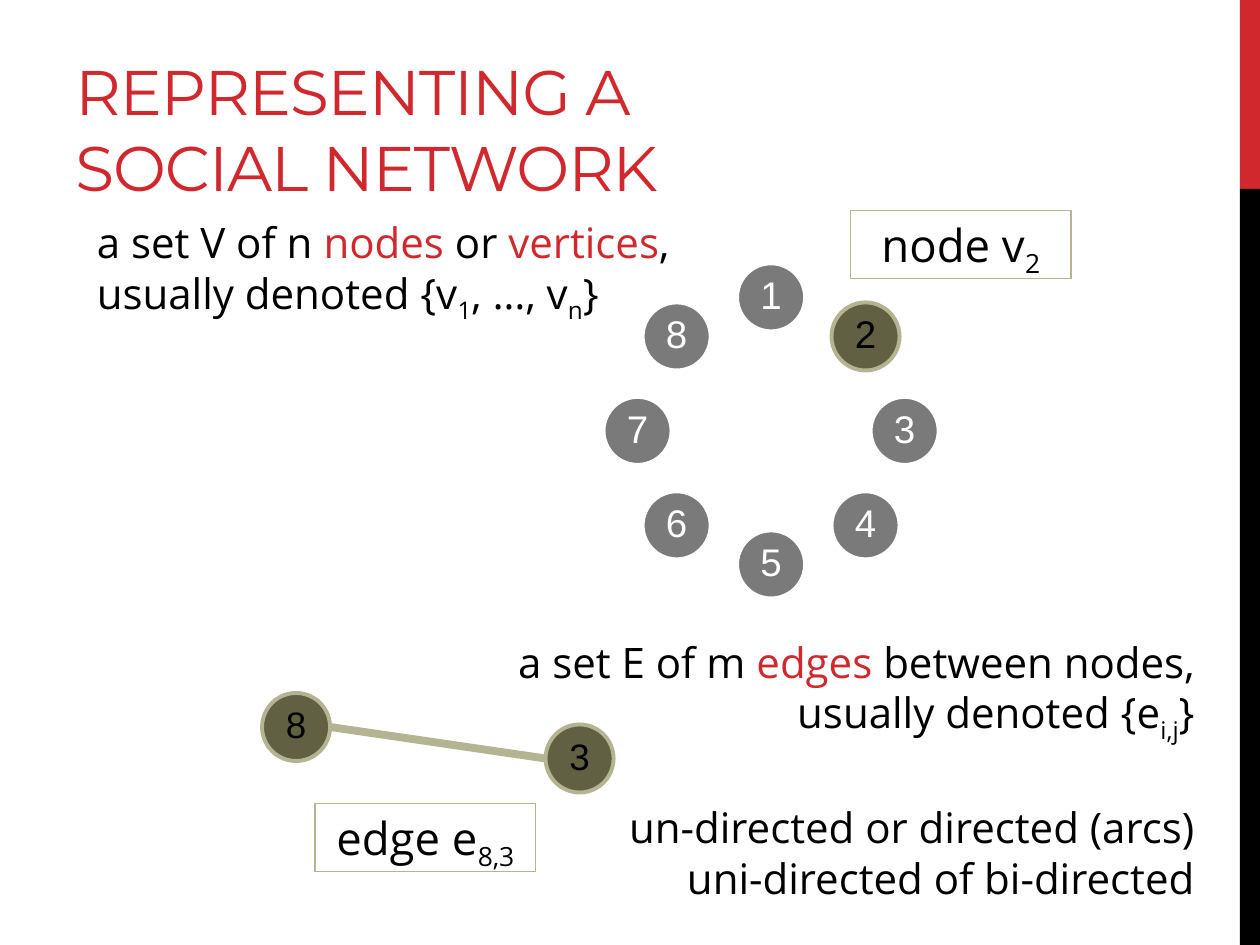
from math import cos, pi, sin

from lxml import etree
from pptx import Presentation
from pptx.dml.color import RGBColor
from pptx.enum.shapes import MSO_CONNECTOR, MSO_SHAPE
from pptx.enum.text import MSO_ANCHOR, PP_ALIGN
from pptx.oxml.ns import qn
from pptx.util import Inches, Pt

OVAL, RECT = MSO_SHAPE.OVAL, MSO_SHAPE.RECTANGLE
STRAIGHT = MSO_CONNECTOR.STRAIGHT
LEFT, CENTER, RIGHT = PP_ALIGN.LEFT, PP_ALIGN.CENTER, PP_ALIGN.RIGHT
TOP, MIDDLE, BOTTOM = MSO_ANCHOR.TOP, MSO_ANCHOR.MIDDLE, MSO_ANCHOR.BOTTOM

WIDTH, HEIGHT = 10, 7.5
RED, BLACK, WHITE = "D1282E", "000000", "FFFFFF"
GRAY, OLIVE, SAND = "7A7A7A", "616042", "B4B392"
TITLE_FONT, BODY_FONT, NODE_FONT = "Montserrat", "Open Sans", "Arial"
NODE_SIZE = 0.54


def color(hex_code):
    return RGBColor.from_string(hex_code)


def write(shape, lines, font, size, align=LEFT, anchor=TOP, ink=BLACK):
    """Each line is a list of (text, style); style is None, "sub" or a colour."""
    frame = shape.text_frame
    frame.word_wrap = True
    frame.vertical_anchor = anchor
    for number, line in enumerate(lines):
        paragraph = frame.add_paragraph() if number else frame.paragraphs[0]
        paragraph.alignment = align
        for text, style in line:
            run = paragraph.add_run()
            run.text = text
            run.font.name, run.font.size = font, Pt(size)
            run.font.color.rgb = color(ink if style in (None, "sub") else style)
            if style == "sub":
                run.font._element.set("baseline", "-25000")
    return frame


def add_text(slide, box, lines, font, size, **layout):
    textbox = slide.shapes.add_textbox(*map(Inches, box))
    return write(textbox, lines, font, size, **layout)


def add_figure(slide, kind, box, fill=None, line=None, line_width=0.75):
    figure = slide.shapes.add_shape(kind, *map(Inches, box))
    figure.shadow.inherit = False
    if fill:
        figure.fill.solid()
        figure.fill.fore_color.rgb = color(fill)
    else:
        figure.fill.background()
    if line:
        figure.line.color.rgb = color(line)
        figure.line.width = Pt(line_width)
    else:
        figure.line.fill.background()
    return figure


def add_node(slide, number, center, size, highlighted=False):
    fill, line, ink = (OLIVE, SAND, BLACK) if highlighted else (GRAY, WHITE, WHITE)
    left, top = (position - NODE_SIZE / 2 for position in center)
    node = add_figure(slide, OVAL, (left, top, NODE_SIZE, NODE_SIZE), fill, line, 2.25)
    frame = write(node, [[(str(number), None)]], NODE_FONT, size, CENTER, MIDDLE, ink)
    frame.margin_left = frame.margin_right = Inches(0.03)
    frame.margin_top = frame.margin_bottom = Inches(0.03)
    frame.paragraphs[0].line_spacing = 0.9


def add_ring(slide, center_x, center_y, radius, count, highlighted):
    for number in range(1, count + 1):
        angle = 2 * pi * (number - 1) / count
        center = (center_x + radius * sin(angle), center_y - radius * cos(angle))
        add_node(slide, number, center, 22, number == highlighted)


def add_edge(slide, start, end):
    """Join the right side of the start node to the left side of the end node."""
    (start_x, start_y), (end_x, end_y) = start, end
    ends = (start_x + NODE_SIZE / 2, start_y, end_x - NODE_SIZE / 2, end_y)
    edge = slide.shapes.add_connector(STRAIGHT, *map(Inches, ends))
    edge.line.color.rgb = color(SAND)
    edge.line.width = Pt(4.5)
    etree.SubElement(edge._element.spPr, qn("a:effectLst"))


def add_label(slide, left, top, name, index):
    label = add_figure(slide, RECT, (left, top, 1.75, 0.54), line=SAND)
    write(label, [[(name, None), (index, "sub")]], BODY_FONT, 26, CENTER)


def main():
    deck = Presentation()
    deck.slide_width, deck.slide_height = Inches(WIDTH), Inches(HEIGHT)
    slide = deck.slides.add_slide(deck.slide_layouts[6])

    # Side band
    band_left, band_split = WIDTH - 0.16, HEIGHT / 5
    add_figure(slide, RECT, (band_left, 0, 0.16, band_split), RED)
    add_figure(slide, RECT, (band_left, band_split, 0.16, HEIGHT - band_split), BLACK)

    # Title
    title = add_text(slide, (0.5, 0.17, 6.33, 1.5),
                     [[("REPRESENTING A SOCIAL NETWORK", None)]],
                     TITLE_FONT, 36, anchor=BOTTOM, ink=RED)
    title.paragraphs[0].runs[0].font._element.set("spc", "-60")

    # Nodes
    add_ring(slide, 6.12, 3.42, 1.06, count=8, highlighted=2)
    add_text(slide, (0.67, 1.67, 5.25, 0.91), [
        [("a set V of n ", None), ("nodes", RED), (" or ", None),
         ("vertices", RED), (",", None)],
        [("usually denoted {v", None), ("1", "sub"), (", …, v", None),
         ("n", "sub"), ("}", None)],
    ], BODY_FONT, 24)
    add_label(slide, 6.75, 1.67, "node v", "2")

    # Edges
    edges = add_text(slide, (2.08, 5, 7.5, 2.12), [
        [("a set E of m ", None), ("edges", RED), (" between nodes,", None)],
        [("usually denoted {e", None), ("i,j", "sub"), ("}", None)],
        [("un-directed or directed (arcs)", None)],
        [("uni-directed of bi-directed", None)],
    ], BODY_FONT, 24, align=RIGHT)
    edges.paragraphs[2].space_before = Pt(33)

    start, end = (2.35, 5.77), (4.6, 6.02)
    add_node(slide, 8, start, 21, highlighted=True)
    add_node(slide, 3, end, 21, highlighted=True)
    add_edge(slide, start, end)
    add_label(slide, 2.5, 6.38, "edge e", "8,3")

    deck.save("out.pptx")


if __name__ == "__main__":
    main()
